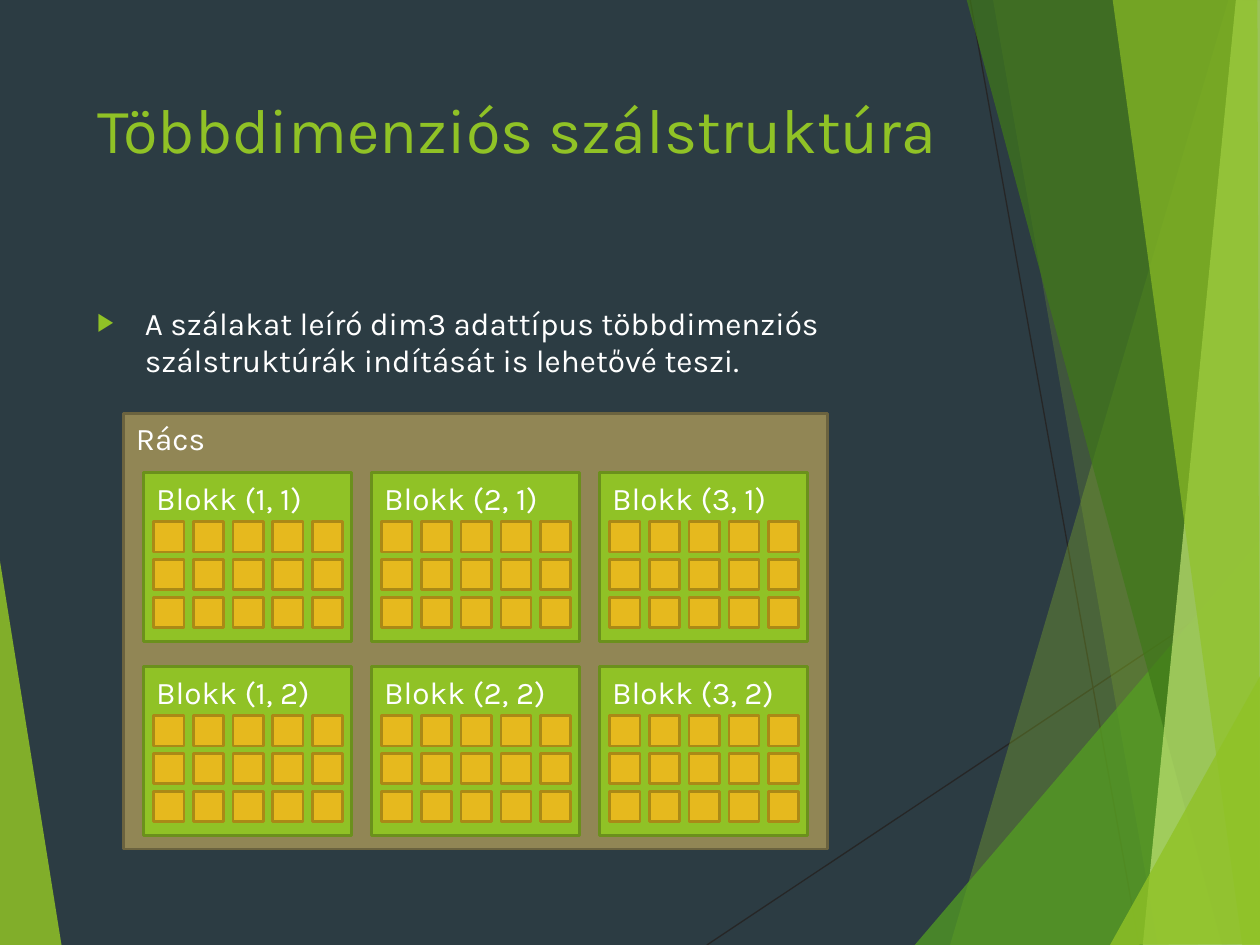
"""Build a slide showing a grid of thread blocks, each holding its threads."""
from dataclasses import dataclass
from itertools import product

from lxml import etree
from pptx import Presentation
from pptx.dml.color import RGBColor
from pptx.enum.shapes import MSO_CONNECTOR, MSO_SHAPE
from pptx.enum.text import MSO_ANCHOR, PP_ALIGN
from pptx.oxml.ns import qn
from pptx.shapes.base import BaseShape
from pptx.shapes.shapetree import SlideShapes
from pptx.util import Inches, Pt

STRAIGHT = MSO_CONNECTOR.STRAIGHT
RECTANGLE = MSO_SHAPE.RECTANGLE
TOP = MSO_ANCHOR.TOP
LEFT = PP_ALIGN.LEFT
FONT = "Karla"
COLORS = {
    "background": "2C3C43", "text": "FFFFFF", "hairline": "262626",
    "green": "90C226", "leaf": "54A021", "forest": "3F7819", "lime": "C0E474",
    "grid": "918655", "grid_edge": "6B633F", "block_edge": "6B901C",
    "thread": "E6B91E", "thread_edge": "AA8916",
}


@dataclass(frozen=True)
class Facet:
    points: tuple[tuple[float, float], ...]
    color: str
    opacity: int


@dataclass(frozen=True)
class Box:
    width: float
    height: float
    fill: str
    edge: str


HAIRLINES = (((5.61, 7.5), (10.01, 4.57)), ((7.7, 0), (9.04, 7.5)))
FACETS = (
    Facet(((-0.01, 4.39), (0.49, 7.51), (-0.01, 7.5)), "green", 85),
    Facet(((9.75, 0), (7.54, 7.5), (10.02, 7.51), (10.01, 0.01)), "green", 30),
    Facet(((7.88, -0.01), (9.19, 7.5), (10.01, 7.5), (10.01, -0.01)), "green", 20),
    Facet(((7.26, 7.5), (10, 4.29), (10.01, 7.5)), "leaf", 72),
    Facet(((7.67, -0.01), (9.7, 7.5), (10.01, 7.49), (10.01, -0.01)), "forest", 70),
    Facet(((9.81, -0.01), (9.07, 7.5), (10.01, 7.5), (10, -0.01)), "lime", 70),
    Facet(((8.83, -0.01), (9.86, 7.5), (10, 7.5), (9.98, -0.01)), "green", 65),
    Facet(((8.81, 7.5), (10.01, 5.35), (10.01, 7.49)), "green", 80),
)
GRID = Box(5.59, 3.46, "grid", "grid_edge")
BLOCK = Box(1.65, 1.34, "green", "block_edge")
THREAD = Box(0.24, 0.24, "thread", "thread_edge")
GRID_LEFT, GRID_TOP = 0.98, 3.28
BLOCK_LEFT, BLOCK_TOP = 1.14, 3.75
BLOCK_STEP_X, BLOCK_STEP_Y = 1.81, 1.54
BLOCK_COLUMNS, BLOCK_ROWS = 3, 2
THREAD_INSET_X, THREAD_INSET_Y = 0.08, 0.39
THREAD_STEP_X, THREAD_STEP_Y = 0.32, 0.3
THREAD_COLUMNS, THREAD_ROWS = 5, 3
THREAD_STEP_X = (BLOCK.width - 2 * THREAD_INSET_X + 0.01 - THREAD.width) / (THREAD_COLUMNS - 1)


def rgb(name: str) -> RGBColor:
    return RGBColor.from_string(COLORS[name])


def draw_hairline(shapes: SlideShapes, start: tuple, end: tuple) -> None:
    hairline = shapes.add_connector(STRAIGHT, *map(Inches, start + end))
    hairline.line.color.rgb = rgb("hairline")
    hairline.line.width = Pt(0.75)
    etree.SubElement(hairline._element.spPr, qn("a:effectLst"))


def draw_facet(shapes: SlideShapes, facet: Facet) -> None:
    start, *others = [(Inches(x), Inches(y)) for x, y in facet.points]
    builder = shapes.build_freeform(*start)
    builder.add_line_segments(others)
    pane = builder.convert_to_shape()
    pane.shadow.inherit = False
    pane.line.fill.background()
    pane.fill.solid()
    pane.fill.fore_color.rgb = rgb(facet.color)
    color = pane._element.spPr.find(f".//{qn('a:srgbClr')}")
    etree.SubElement(color, qn("a:alpha"), val=str(facet.opacity * 1000))


def write(shape: BaseShape, text: str, size: int, color: str = "text") -> None:
    frame = shape.text_frame
    frame.text = text
    frame.word_wrap = True
    frame.vertical_anchor = TOP
    paragraph = frame.paragraphs[0]
    paragraph.alignment = LEFT
    paragraph.font.name = FONT
    paragraph.font.size = Pt(size)
    paragraph.font.color.rgb = rgb(color)


def draw_box(shapes: SlideShapes, box: Box, left: float, top: float, label: str = "") -> None:
    rectangle = shapes.add_shape(
        RECTANGLE, *map(Inches, (left, top, box.width, box.height)))
    rectangle.shadow.inherit = False
    rectangle.fill.solid()
    rectangle.fill.fore_color.rgb = rgb(box.fill)
    rectangle.line.color.rgb = rgb(box.edge)
    rectangle.line.width = Pt(1.5)
    if label:
        write(rectangle, label, 18)


def draw_block(shapes: SlideShapes, column: int, row: int) -> None:
    left = BLOCK_LEFT + column * BLOCK_STEP_X
    top = BLOCK_TOP + row * BLOCK_STEP_Y
    draw_box(shapes, BLOCK, left, top, f"Blokk ({column + 1}, {row + 1})")
    for thread_row, thread_column in product(range(THREAD_ROWS), range(THREAD_COLUMNS)):
        draw_box(shapes, THREAD,
                 left + THREAD_INSET_X + thread_column * THREAD_STEP_X,
                 top + THREAD_INSET_Y + thread_row * THREAD_STEP_Y)


def place(shapes: SlideShapes, placeholder: BaseShape, top: float, height: float) -> None:
    placeholder.left, placeholder.top = Inches(0.67), Inches(top)
    placeholder.width, placeholder.height = Inches(6.94), Inches(height)
    shapes._spTree.append(placeholder._element)


def add_bullet(body: BaseShape) -> None:
    paragraph = body.text_frame.paragraphs[0]
    paragraph.space_before = Pt(10)
    properties = paragraph._p.get_or_add_pPr()
    properties.set("marL", str(Inches(0.38)))
    properties.set("indent", str(-Inches(0.38)))
    bullet_color = etree.Element(qn("a:buClr"))
    etree.SubElement(bullet_color, qn("a:srgbClr"), val=COLORS["green"])
    bullet_size = etree.Element(qn("a:buSzPct"), val="80000")
    bullet_font = etree.Element(qn("a:buFont"), typeface=FONT)
    bullet_mark = etree.Element(qn("a:buChar"), char="▶")
    run_defaults = properties.find(qn("a:defRPr"))
    for part in (bullet_color, bullet_size, bullet_font, bullet_mark):
        run_defaults.addprevious(part)


def main() -> None:
    presentation = Presentation()
    presentation.slide_width, presentation.slide_height = Inches(10), Inches(7.5)
    slide = presentation.slides.add_slide(presentation.slide_layouts[1])
    slide.background.fill.solid()
    slide.background.fill.fore_color.rgb = rgb("background")
    shapes = slide.shapes
    for start, end in HAIRLINES:
        draw_hairline(shapes, start, end)
    for facet in FACETS:
        draw_facet(shapes, facet)

    title, body = shapes.title, slide.placeholders[1]
    place(shapes, title, 0.67, 1.44)
    write(title, "Többdimenziós szálstruktúra", 36, "green")
    place(shapes, body, 2.36, 4.24)
    write(body, "A szálakat leíró dim3 adattípus többdimenziós "
                "szálstruktúrák indítását is lehetővé teszi.", 18)
    add_bullet(body)

    draw_box(shapes, GRID, GRID_LEFT, GRID_TOP, "Rács")
    for column, row in product(range(BLOCK_COLUMNS), range(BLOCK_ROWS)):
        draw_block(shapes, column, row)
    presentation.save("out.pptx")


if __name__ == "__main__":
    main()
